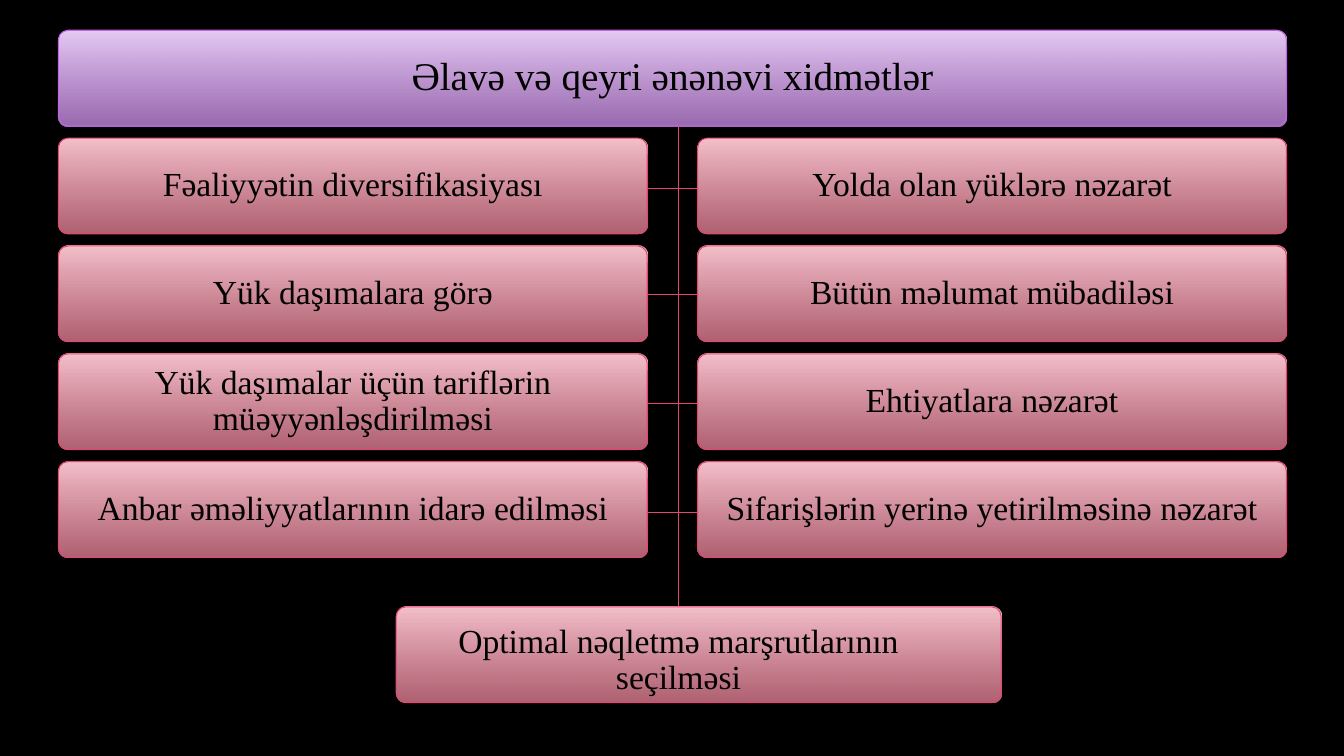
from lxml import etree
from pptx import Presentation
from pptx.dml.color import RGBColor
from pptx.enum import shapes, text
from pptx.oxml.ns import qn
from pptx.util import Inches, Pt

BLACK = RGBColor(0x00, 0x00, 0x00)
LILAC = RGBColor(0xE7, 0xCA, 0xF5)
PURPLE = RGBColor(0xCF, 0x91, 0xEC)
PURPLE_EDGE = RGBColor(0xC3, 0x63, 0xE8)
PINK = RGBColor(0xF5, 0xC1, 0xCB)
ROSE = RGBColor(0xEC, 0x84, 0x9A)
ROSE_EDGE = RGBColor(0xE8, 0x45, 0x74)
PURPLE_STYLE = (LILAC, PURPLE, PURPLE_EDGE)
ROSE_STYLE = (PINK, ROSE, ROSE_EDGE)

FONT = "Times New Roman"
LEFT, TOP, WIDTH = 0.58, 0.3, 12.18
CARD_WIDTH, CARD_HEIGHT = 5.84, 0.95
ROW_STEP = 1.07
TRUNK_X = 6.73
ROUTE_TOP = 6.02

HEADING = "Əlavə və qeyri ənənəvi xidmətlər"
COLUMNS = [
    ["Fəaliyyətin diversifikasiyası", "Yük daşımalara görə",
     "Yük daşımalar üçün tariflərin müəyyənləşdirilməsi",
     "Anbar əməliyyatlarının idarə edilməsi"],
    ["Yolda olan yüklərə nəzarət", "Bütün məlumat mübadiləsi",
     "Ehtiyatlara nəzarət", "Sifarişlərin yerinə yetirilməsinə nəzarət"],
]
ROUTE = "Optimal nəqletmə marşrutlarının seçilməsi"
BRANCH_YS = [1.87, 2.92, 4, 5.08]


def write_label(holder, wording, size, inset):
    frame = holder.text_frame
    frame.word_wrap = True
    frame.vertical_anchor = text.MSO_ANCHOR.MIDDLE
    frame.margin_left = frame.margin_right = Inches(inset)
    frame.margin_top = frame.margin_bottom = Inches(inset)
    paragraph = frame.paragraphs[0]
    paragraph.alignment = text.PP_ALIGN.CENTER
    paragraph.line_spacing = 0.9
    run = paragraph.add_run()
    run.text = wording
    run.font.name = FONT
    run.font.size = Pt(size)
    run.font.color.rgb = BLACK


def add_card(slide, left, top, width, style):
    """Rounded card shaded from top to bottom, its lower colour translucent."""
    card = slide.shapes.add_shape(
        shapes.MSO_SHAPE.ROUNDED_RECTANGLE,
        Inches(left), Inches(top), Inches(width), Inches(CARD_HEIGHT))
    card.adjustments[0] = 0.1
    card.shadow.inherit = False
    upper, lower, edge = style
    card.fill.gradient()
    card.fill.gradient_angle = 270
    stops = card.fill.gradient_stops
    for stop, position, colour in zip(stops, (0, 1), (upper, lower)):
        stop.position = position
        stop.color.rgb = colour
    lower_colour = card.fill._xPr.findall(".//" + qn("a:srgbClr"))[-1]
    etree.SubElement(lower_colour, qn("a:alpha"), val="74000")
    card.line.color.rgb = edge
    card.line.width = Pt(0.75)
    return card


def add_heading(slide, left, top, width):
    card = add_card(slide, left, top, width, PURPLE_STYLE)
    write_label(card, HEADING, 28, 0.11)


def add_service_column(slide, left, top, services):
    for row, service in enumerate(services):
        card = add_card(slide, left, top + row * ROW_STEP, CARD_WIDTH, ROSE_STYLE)
        write_label(card, service, 24, 0.11)


def add_route_card(slide, left, top):
    """Bottom card, its two-line label centred under the trunk line."""
    add_card(slide, left, top, 6, ROSE_STYLE)
    label_width = 5.4
    label = slide.shapes.add_textbox(
        Inches(TRUNK_X - label_width / 2), Inches(top + 0.09),
        Inches(label_width), Inches(0.89))
    write_label(label, ROUTE, 24, 0.12)


def add_line(slide, x1, y1, x2, y2):
    line = slide.shapes.add_connector(
        shapes.MSO_CONNECTOR.STRAIGHT,
        Inches(x1), Inches(y1), Inches(x2), Inches(y2))
    line.line.color.rgb = ROSE_EDGE
    line.line.width = Pt(0.75)
    etree.SubElement(line._element.spPr, qn("a:effectLst"))


def add_tree_lines(slide, left, right, top, bottom):
    add_line(slide, TRUNK_X, top, TRUNK_X, bottom)
    for y in BRANCH_YS:
        add_line(slide, left, y, right, y)


def main():
    deck = Presentation()
    deck.slide_width = Inches(13.33)
    deck.slide_height = Inches(7.5)
    slide = deck.slides.add_slide(deck.slide_layouts[6])
    slide.background.fill.solid()
    slide.background.fill.fore_color.rgb = BLACK

    right_column = LEFT + WIDTH - CARD_WIDTH
    add_heading(slide, LEFT, TOP, WIDTH)
    for left, services in zip((LEFT, right_column), COLUMNS):
        add_service_column(slide, left, TOP + ROW_STEP, services)
    add_route_card(slide, 3.93, ROUTE_TOP)
    add_tree_lines(slide, LEFT + CARD_WIDTH, right_column,
                   TOP + CARD_HEIGHT, ROUTE_TOP)
    deck.save("out.pptx")


if __name__ == "__main__":
    main()
